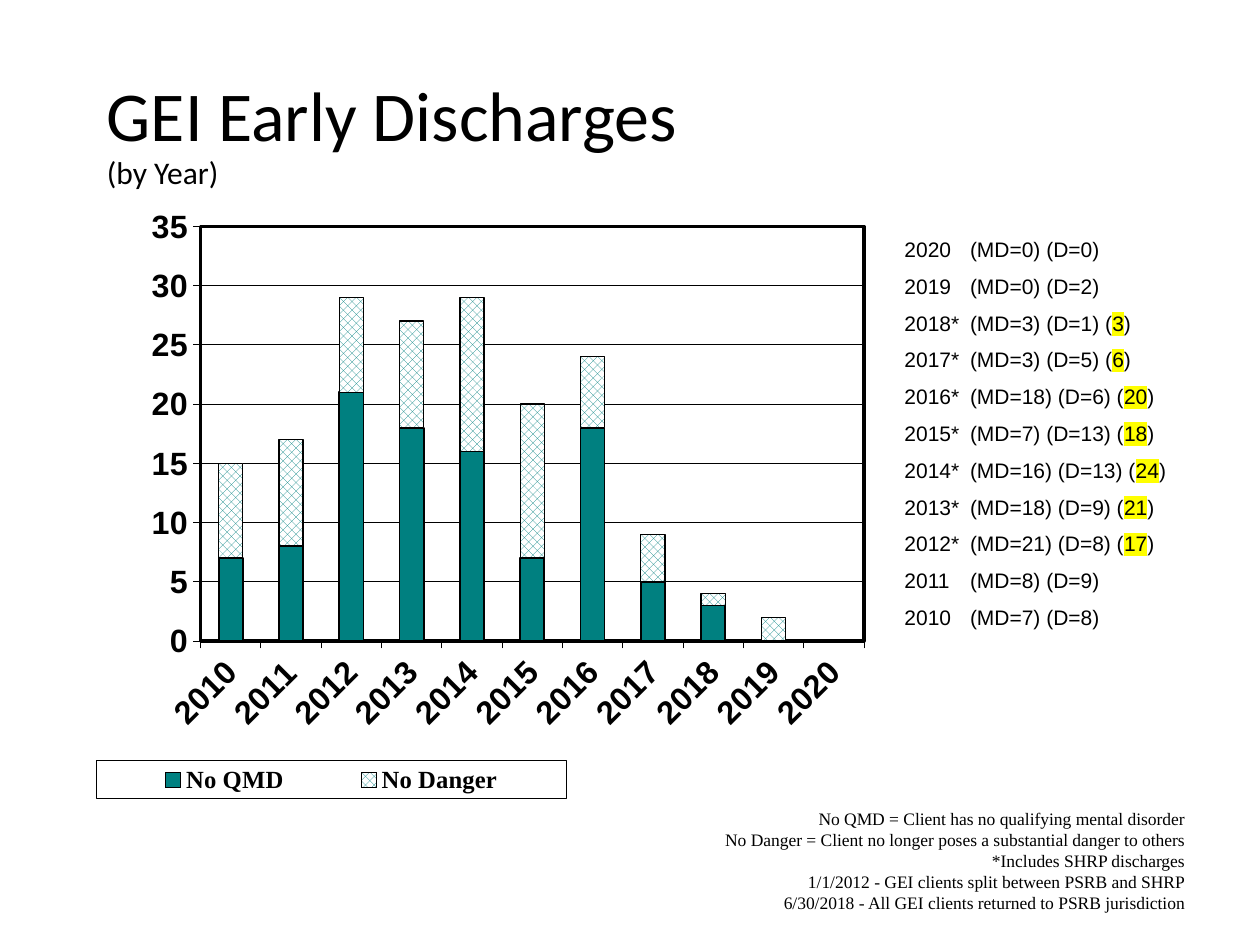
from lxml import etree
from pptx import Presentation
from pptx.chart.data import CategoryChartData
from pptx.dml.color import RGBColor
from pptx.enum import chart as charts, dml, text
from pptx.oxml import parse_xml
from pptx.oxml.ns import nsdecls, qn
from pptx.util import Inches, Pt

COLORS = {"black": "000000", "white": "FFFFFF", "teal": "008080", "yellow": "FFFF00"}

TITLE, SUBTITLE = "GEI Early Discharges", "(by Year)"
YEARS = [str(year) for year in range(2010, 2021)]
NO_QMD = [7, 8, 21, 18, 16, 7, 18, 5, 3, 0, 0]
NO_DANGER = [8, 9, 8, 9, 13, 13, 6, 4, 1, 2, 0]

# year, MD, D, SHRP discharges
YEAR_COUNTS = [
    (2020, 0, 0, None), (2019, 0, 2, None), (2018, 3, 1, 3), (2017, 3, 5, 6),
    (2016, 18, 6, 20), (2015, 7, 13, 18), (2014, 16, 13, 24), (2013, 18, 9, 21),
    (2012, 21, 8, 17), (2011, 8, 9, None), (2010, 7, 8, None),
]
FOOTNOTES = [
    "No QMD = Client has no qualifying mental disorder",
    "No Danger = Client no longer poses a substantial danger to others",
    "*Includes SHRP discharges",
    "1/1/2012 - GEI clients split between PSRB and SHRP",
    "6/30/2018 - All GEI clients returned to PSRB jurisdiction",
]


def rgb(name):
    return RGBColor.from_string(COLORS[name])


def style_font(font, name, size, bold=False):
    font.name, font.size, font.bold = name, Pt(size), bold
    font.color.rgb = rgb("black")


def style_line(line, width):
    line.color.rgb = rgb("black")
    line.width = Pt(width)


def add_frame(slide, left, top, width, height):
    box = slide.shapes.add_textbox(*map(Inches, (left, top, width, height)))
    box.text_frame.word_wrap = True
    return box.text_frame


def next_paragraph(frame, index):
    return frame.add_paragraph() if index else frame.paragraphs[0]


def add_run(paragraph, words, name, size, highlight=None):
    run = paragraph.add_run()
    run.text = words
    style_font(run.font, name, size)
    if highlight:
        mark = parse_xml(f'<a:highlight {nsdecls("a")}>'
                         f'<a:srgbClr val="{COLORS[highlight]}"/></a:highlight>')
        run.font._element.find(qn("a:solidFill")).addnext(mark)


def manual_layout(x, y, width, height, inner=False):
    layout = etree.Element(qn("c:layout"))
    manual = etree.SubElement(layout, qn("c:manualLayout"))
    values = [("layoutTarget", "inner")] if inner else []
    values += [("xMode", "edge"), ("yMode", "edge"),
               ("x", x), ("y", y), ("w", width), ("h", height)]
    for tag, value in values:
        etree.SubElement(manual, qn(f"c:{tag}")).set("val", str(value))
    return layout


def outline(width):
    return parse_xml(
        f'<c:spPr {nsdecls("c", "a")}><a:noFill/><a:ln w="{Pt(width)}"><a:solidFill>'
        f'<a:srgbClr val="{COLORS["black"]}"/></a:solidFill></a:ln></c:spPr>')


def add_discharge_chart(slide):
    data = CategoryChartData(number_format="0")
    data.categories = YEARS
    data.add_series("No QMD", NO_QMD)
    data.add_series("No Danger", NO_DANGER)
    chart = slide.shapes.add_chart(
        charts.XL_CHART_TYPE.COLUMN_STACKED, Inches(-2.42), Inches(-0.02),
        Inches(13.33), Inches(6.73), data).chart
    chart.has_title = False
    style_font(chart.font, "Times New Roman", 14, True)

    plot = chart.plots[0]
    plot.gap_width, plot.overlap, plot.vary_by_categories = 150, 100, False
    no_qmd, no_danger = plot.series
    no_qmd.format.fill.solid()
    no_qmd.format.fill.fore_color.rgb = rgb("teal")
    style_line(no_qmd.format.line, 1)
    fill = no_danger.format.fill
    fill.patterned()
    fill.pattern = dml.MSO_PATTERN.PERCENT_50
    fill.fore_color.rgb, fill.back_color.rgb = rgb("teal"), rgb("white")
    style_line(no_danger.format.line, 0.75)

    for axis in (chart.category_axis, chart.value_axis):
        style_font(axis.tick_labels.font, "Arial", 18.4, True)
        style_line(axis.format.line, 0.44)
        axis.major_tick_mark = charts.XL_TICK_MARK.OUTSIDE
        axis.minor_tick_mark = charts.XL_TICK_MARK.NONE
    label_body = chart.category_axis._element.find(qn("c:txPr")).find(qn("a:bodyPr"))
    label_body.set("rot", str(-45 * 60000))
    label_body.set("vert", "horz")
    values = chart.value_axis
    values.minimum_scale, values.maximum_scale, values.major_unit = 0, 35, 5
    style_line(values.major_gridlines.format.line, 0.44)

    chart.has_legend = True
    legend = chart.legend
    legend.position = charts.XL_LEGEND_POSITION.BOTTOM
    legend.include_in_layout = False
    style_font(legend.font, "Times New Roman", 14.1, True)
    legend_xml = legend._element
    for old in legend_xml.findall(qn("c:layout")):
        legend_xml.remove(old)
    legend_xml.find(qn("c:legendPos")).addnext(manual_layout(0.239, 0.9, 0.28, 0.045))
    legend_xml.find(qn("c:txPr")).addprevious(outline(0.44))

    plot_area = chart._chartSpace.chart.plotArea
    for old in plot_area.findall(qn("c:layout")):
        plot_area.remove(old)
    plot_area.insert(0, manual_layout(0.301, 0.27, 0.395, 0.489, inner=True))
    plot_area.append(outline(1.75))


def add_title(slide):
    frame = add_frame(slide, 0.75, 0.33, 8.5, 1.5)
    frame.vertical_anchor = text.MSO_ANCHOR.MIDDLE
    paragraph = frame.paragraphs[0]
    paragraph.line_spacing = 0.9
    add_run(paragraph, TITLE, "Calibri", 40)
    paragraph.add_line_break()
    add_run(paragraph, SUBTITLE, "Calibri", 18)


def add_year_counts(slide):
    frame = add_frame(slide, 7.08, 1.83, 2.42, 3.33)
    for index, (year, disorder, danger, shrp) in enumerate(YEAR_COUNTS):
        paragraph = next_paragraph(frame, index)
        if index:
            paragraph.space_before = Pt(6.6)
        paragraph._p.get_or_add_pPr().append(parse_xml(
            f'<a:tabLst {nsdecls("a")}><a:tab pos="{Inches(0.52)}" algn="l"/></a:tabLst>'))
        star, tail = ("*", " (") if shrp else ("", "")
        counts = f"{year}{star}\t(MD={disorder}) (D={danger}){tail}"
        add_run(paragraph, counts, "Arial", 12)
        if shrp:
            add_run(paragraph, str(shrp), "Arial", 12, "yellow")
            add_run(paragraph, ")", "Arial", 12)


def add_footnotes(slide):
    frame = add_frame(slide, 4.92, 6.36, 4.58, 1.11)
    for index, note in enumerate(FOOTNOTES):
        paragraph = next_paragraph(frame, index)
        paragraph.alignment = text.PP_ALIGN.RIGHT
        add_run(paragraph, note, "Times New Roman", 10)


def main():
    presentation = Presentation()
    presentation.slide_width, presentation.slide_height = Inches(10), Inches(7.5)
    slide = presentation.slides.add_slide(presentation.slide_layouts[6])
    add_discharge_chart(slide)
    add_title(slide)
    add_year_counts(slide)
    add_footnotes(slide)
    presentation.save("out.pptx")


if __name__ == "__main__":
    main()
